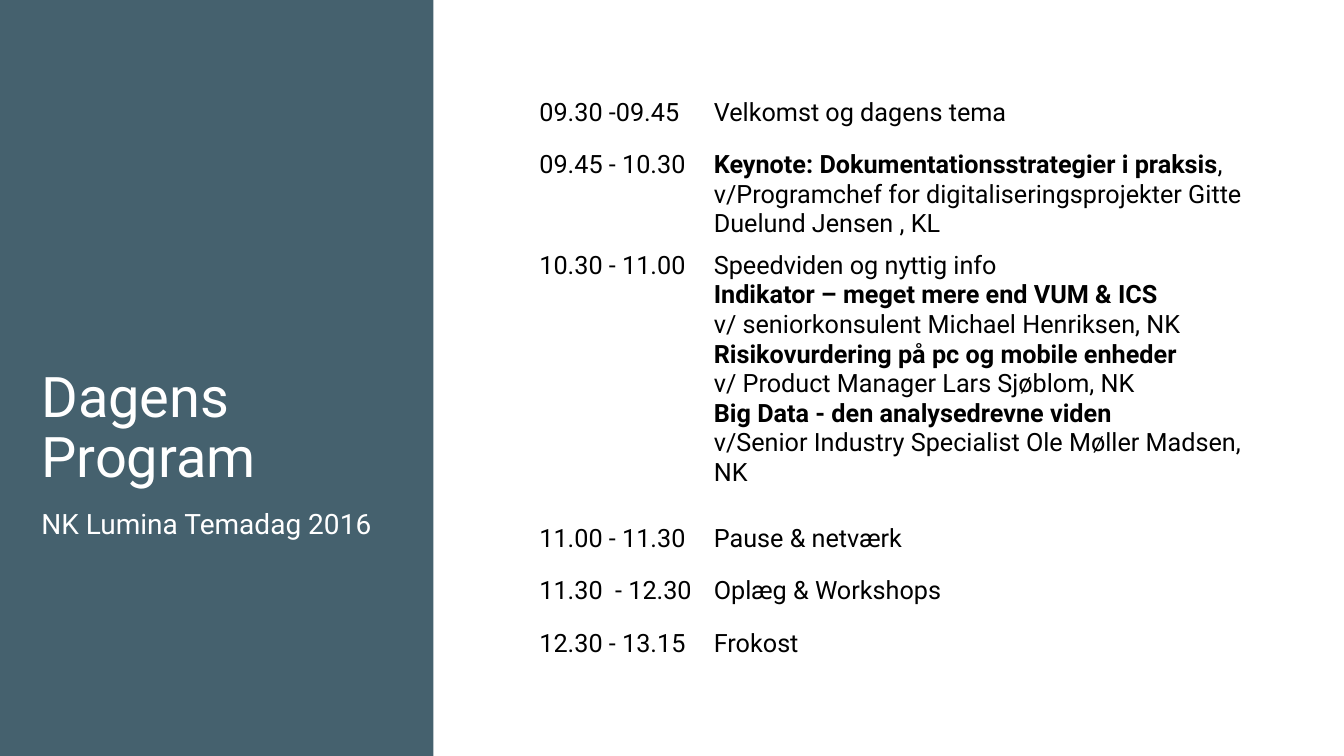
import pptx
import pptx.dml.color
import pptx.enum.shapes
import pptx.enum.text
import pptx.util

Inches, Pt = pptx.util.Inches, pptx.util.Pt
ANCHOR = pptx.enum.text.MSO_ANCHOR

# Content
TITLE = "Dagens Program"
SUBTITLE = "NK Lumina Temadag 2016"
# Each row: time, paragraphs of (bold text, break after it, plain text), height
PROGRAM = [
    ("09.30 -09.45", [("", False, "Velkomst og dagens tema")], 0.52),
    ("09.45 - 10.30", [
        ("Keynote: Dokumentationsstrategier i praksis", False,
         ", v/Programchef for digitaliseringsprojekter Gitte Duelund Jensen , KL"),
    ], 0.98),
    ("10.30 - 11.00", [
        ("", False, "Speedviden og nyttig info"),
        ("Indikator – meget mere end VUM & ICS", True, "v/ seniorkonsulent Michael Henriksen, NK"),
        ("Risikovurdering på pc og mobile enheder", True, "v/ Product Manager Lars Sjøblom, NK"),
        ("Big Data - den analysedrevne viden", True,
         "v/Senior Industry Specialist Ole Møller Madsen, NK"),
    ], 2.71),
    ("11.00 - 11.30", [("", False, "Pause & netværk")], 0.52),
    ("11.30  - 12.30", [("", False, "Oplæg & Workshops")], 0.52),
    ("12.30 - 13.15", [("", False, "Frokost")], 0.52),
    ("", [], 0.52),
]
COLUMNS = [1.73, 2.87, 2.87]
MERGED_ROWS = 5
COLORS = {"panel": "45616E", "light": "FFFFFF", "text": "000000"}
FONT = "Roboto"


def rgb(name):
    return pptx.dml.color.RGBColor.from_string(COLORS[name])


def add_span(para, text, size, color, bold=False):
    span = para.add_run()
    span.text = text
    span.font.name = FONT
    span.font.size = Pt(size)
    span.font.bold = bold
    span.font.color.rgb = rgb(color)


def add_label(page, text, top, height, size, anchor, bottom):
    box = page.shapes.add_textbox(Inches(0.41), Inches(top), Inches(3.42), Inches(height))
    frame = box.text_frame
    frame.word_wrap = True
    frame.vertical_anchor = anchor
    frame.margin_left = frame.margin_right = 0
    frame.margin_top, frame.margin_bottom = Inches(0.04), Inches(bottom)
    para = frame.paragraphs[0]
    para.line_spacing = 0.9
    add_span(para, text, size, "light")


def fill_details(frame, details):
    for index, (heading, line_break, plain) in enumerate(details):
        para = frame.add_paragraph() if index else frame.paragraphs[0]
        if heading:
            add_span(para, heading, 18, "text", bold=True)
        if line_break:
            para.add_line_break()
        add_span(para, plain, 18, "text")


def add_program(page):
    height = sum(row[2] for row in PROGRAM)
    table = page.shapes.add_table(
        len(PROGRAM), len(COLUMNS), Inches(5.25), Inches(0.92),
        Inches(sum(COLUMNS)), Inches(height)).table
    table.first_row = table.horz_banding = False
    for column, width in zip(table.columns, COLUMNS):
        column.width = Inches(width)
    for cell in table.iter_cells():
        cell.fill.background()
    for index, (time, details, row_height) in enumerate(PROGRAM):
        table.rows[index].height = Inches(row_height)
        if index < MERGED_ROWS:
            table.cell(index, 1).merge(table.cell(index, 2))
        if time:
            add_span(table.cell(index, 0).text_frame.paragraphs[0], time, 18, "text")
        fill_details(table.cell(index, 1).text_frame, details)


def main():
    deck = pptx.Presentation()
    deck.slide_width, deck.slide_height = Inches(13.33), Inches(7.5)
    page = deck.slides.add_slide(deck.slide_layouts[6])

    # Side panel
    panel = page.shapes.add_shape(
        pptx.enum.shapes.MSO_SHAPE.RECTANGLE, 0, 0, Inches(4.3), deck.slide_height)
    panel.shadow.inherit = False
    panel.fill.solid()
    panel.fill.fore_color.rgb = rgb("panel")
    panel.line.fill.background()

    # Title and subtitle
    add_label(page, TITLE, 3.1, 1.92, 40, ANCHOR.BOTTOM, 0.16)
    add_label(page, SUBTITLE, 5.02, 0.38, 20, ANCHOR.TOP, 0.04)

    # Program table
    add_program(page)
    deck.save("out.pptx")


if __name__ == "__main__":
    main()
